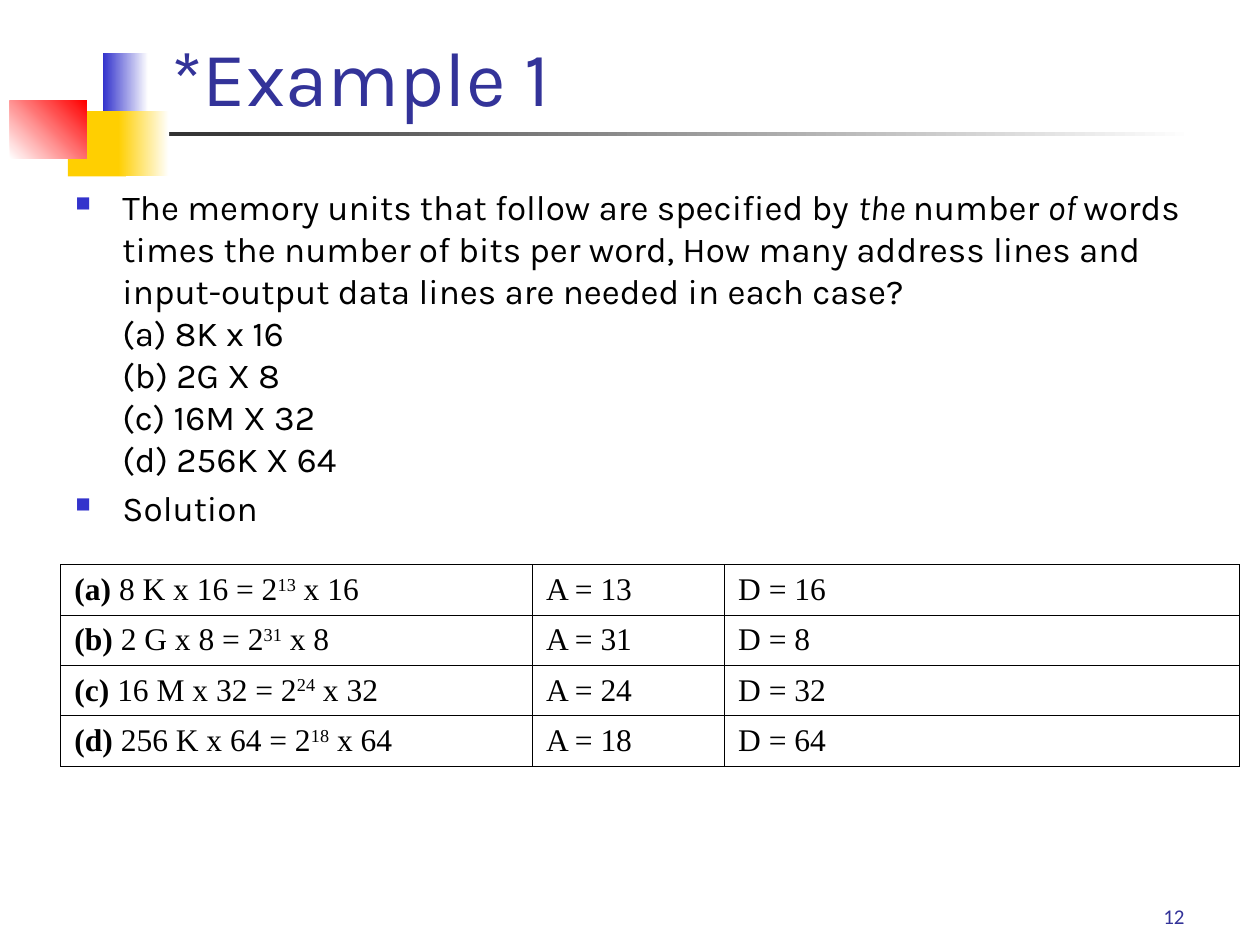
from lxml.etree import SubElement
from pptx import Presentation
from pptx.dml.color import RGBColor
from pptx.enum.shapes import MSO_SHAPE
from pptx.enum.text import MSO_ANCHOR, PP_ALIGN
from pptx.oxml import parse_xml
from pptx.oxml.ns import nsdecls, qn
from pptx.util import Cm, Pt

COLORS = {
    "text": "000000",
    "title": "333399",
    "blue": "3333CC",
    "yellow": "FFCF01",
    "red": "FF0000",
    "dark": "1C1C1C",
    "white": "FFFFFF",
}
FORMATS = {
    "title": {"name": "Karla", "size": Pt(44), "color": "title"},
    "body": {"name": "Karla", "size": Pt(20), "color": "text"},
    "number": {"name": "Calibri", "size": Pt(12), "color": "title"},
    "table": {"name": "Times New Roman", "size": Pt(18), "color": "text"},
}
QUESTION = [
    ("The memory units that follow are specified by ", False),
    ("the ", True),
    ("number ", False),
    ("of ", True),
    ("words times the number of bits per word, How many address lines and "
     "input-output data lines are needed in each case?", False),
]
CASES = ["(a) 8K x 16", "(b) 2G X 8", "(c) 16M X 32", "(d) 256K X 64"]
SOLUTIONS = [
    ("(a) ", "8 K", 13, 16),
    ("(b) ", "2 G", 31, 8),
    ("(c) ", "16 M", 24, 32),
    ("(d) ", "256 K", 18, 64),
]


def rgb(name):
    return RGBColor.from_string(COLORS[name])


def apply_values(target, values):
    for attribute, value in values.items():
        setattr(target, attribute, value)


def add_run(paragraph, text, format_name, **extra):
    run = paragraph.add_run()
    run.text = text
    values = {**FORMATS[format_name], **extra}
    run.font.color.rgb = rgb(values.pop("color"))
    apply_values(run.font, values)
    return run


def add_text_frame(slide, box, anchor):
    frame = slide.shapes.add_textbox(*map(Cm, box)).text_frame
    apply_values(frame, {"word_wrap": True, "vertical_anchor": anchor})
    return frame


def add_block(slide, box, start, end=None, angle=0):
    shape = slide.shapes.add_shape(MSO_SHAPE.RECTANGLE, *map(Cm, box))
    shape.shadow.inherit = False
    shape.line.fill.background()
    if end is None:
        shape.fill.solid()
        shape.fill.fore_color.rgb = rgb(start)
        return
    shape.fill.gradient()
    shape.fill.gradient_angle = angle
    for stop, color in zip(shape.fill.gradient_stops, (start, end)):
        stop.color.rgb = rgb(color)


def add_emblem(slide, box):
    left, top, width, height = box
    yellow_top = top + 1.17
    add_block(slide, (left + 1.02, top + 1.6, width - 1.02, 0.08), "dark", "white")
    add_block(slide, (left + 1.88, top, 0.91, 1.32), "blue", "white")
    add_block(slide, (left + 1.17, yellow_top, 1.17, height - 1.17), "yellow")
    add_block(slide, (left + 2.19, yellow_top, 1.02, height - 1.17), "yellow", "white")
    add_block(slide, (left, top + 0.96, 1.55, 1.17), "white", "red", 45)


def add_title(slide, box):
    frame = add_text_frame(slide, box, MSO_ANCHOR.BOTTOM)
    add_run(frame.paragraphs[0], "*Example 1", "title")


def add_bullet(paragraph):
    properties = paragraph._p.get_or_add_pPr()
    properties.set("marL", str(Cm(0.95)))
    properties.set("indent", str(-Cm(0.95)))
    color = SubElement(properties, qn("a:buClr"))
    SubElement(color, qn("a:srgbClr"), val=COLORS["blue"])
    SubElement(properties, qn("a:buSzPct"), val="60000")
    SubElement(properties, qn("a:buChar"), char="■")


def add_body(slide, box):
    frame = add_text_frame(slide, box, MSO_ANCHOR.TOP)
    question = frame.paragraphs[0]
    add_bullet(question)
    for text, italic in QUESTION:
        add_run(question, text, "body", italic=italic)
    for case in CASES:
        question.add_line_break()
        add_run(question, case, "body")
    solution = frame.add_paragraph()
    add_bullet(solution)
    solution.space_before = Pt(4)
    add_run(solution, "Solution", "body")


def style_cell(cell):
    apply_values(cell, {
        "vertical_anchor": MSO_ANCHOR.MIDDLE,
        "margin_left": Cm(0.28),
        "margin_right": Cm(0.28),
    })
    cell.fill.background()
    properties = cell._tc.get_or_add_tcPr()
    for position, side in enumerate("LRTB"):
        properties.insert(position, parse_xml(
            f'<a:ln{side} {nsdecls("a")} w="{Pt(0.5)}"><a:solidFill>'
            f'<a:srgbClr val="{COLORS["text"]}"/></a:solidFill></a:ln{side}>'))


def add_solutions(slide, box):
    table = slide.shapes.add_table(len(SOLUTIONS), 3, *map(Cm, box)).table
    apply_values(table, {"first_row": False, "horz_banding": False})
    for column, share in zip(table.columns, (0.4, 0.163, 0.437)):
        column.width = Cm(box[2] * share)
    for row, (label, words, address, data) in zip(table.rows, SOLUTIONS):
        for cell in row.cells:
            style_cell(cell)
        expression, address_lines, data_lines = (
            cell.text_frame.paragraphs[0] for cell in row.cells)
        add_run(expression, label, "table", bold=True)
        add_run(expression, f"{words} x {data} = 2", "table")
        exponent = add_run(expression, str(address), "table")
        exponent._r.get_or_add_rPr().set("baseline", "30000")
        add_run(expression, f" x {data}", "table")
        add_run(address_lines, f"A = {address}", "table")
        add_run(data_lines, f"D = {data}", "table")


def add_slide_number(slide, box):
    paragraph = add_text_frame(slide, box, MSO_ANCHOR.BOTTOM).paragraphs[0]
    paragraph.alignment = PP_ALIGN.RIGHT
    add_run(paragraph, "12", "number")


def main():
    presentation = Presentation()
    apply_values(presentation, {"slide_width": Cm(25.4), "slide_height": Cm(19.05)})
    slide = presentation.slides.add_slide(presentation.slide_layouts[6])
    add_emblem(slide, (0.2, 1.07, 23.88, 2.49))
    add_title(slide, (3.2, 0.2, 21.64, 2.39))
    add_body(slide, (1.27, 3.61, 22.86, 13.51))
    add_slide_number(slide, (18.85, 17.58, 5.28, 1.27))
    add_solutions(slide, (1.22, 11.38, 23.77, 4.06))
    presentation.save("out.pptx")


if __name__ == "__main__":
    main()
